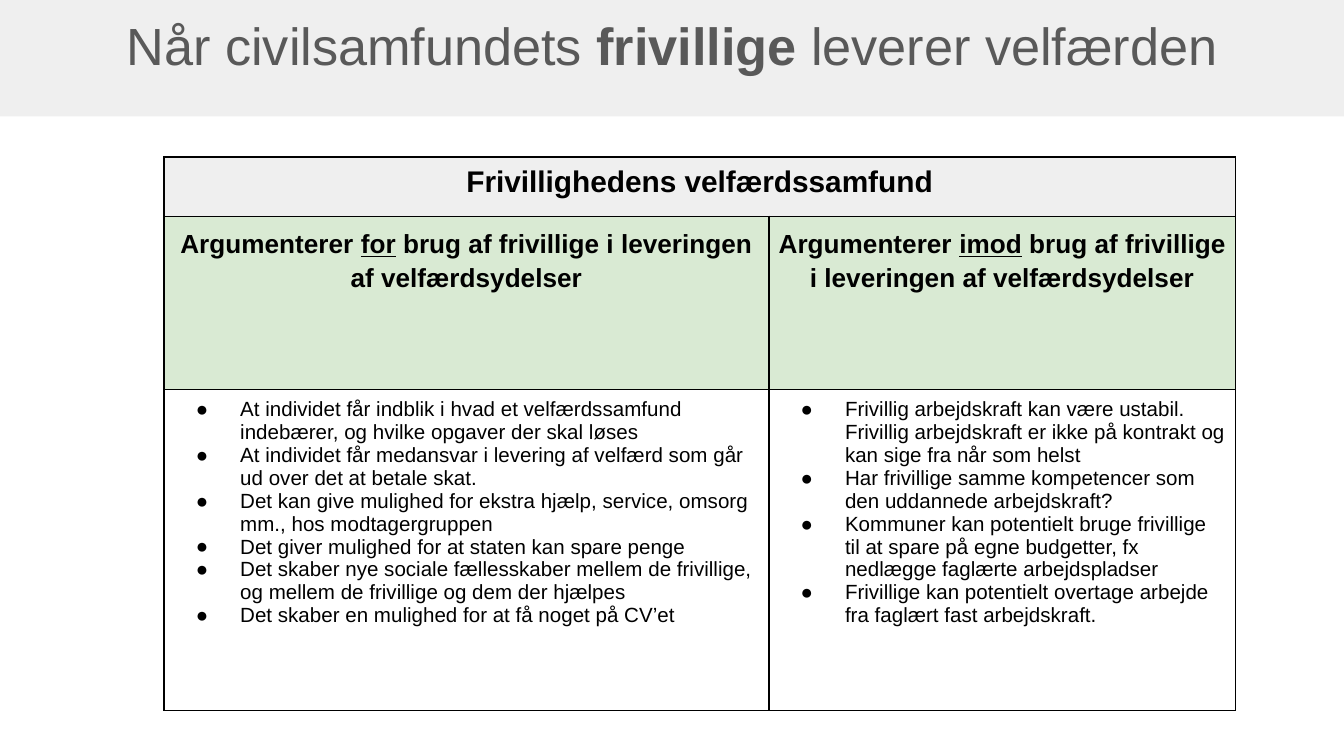
from lxml import etree
from pptx import Presentation
from pptx.dml.color import RGBColor
from pptx.enum.text import MSO_ANCHOR, MSO_AUTO_SIZE, PP_ALIGN
from pptx.oxml.ns import qn
from pptx.util import Cm, Pt

CENTER, LEFT = PP_ALIGN.CENTER, PP_ALIGN.LEFT
TOP = MSO_ANCHOR.TOP
NO_AUTOFIT = MSO_AUTO_SIZE.NONE
TITLE_ONLY = 5
FONT = "Arial"
COLORS = {"band": "EFEFEF", "title": "595959", "green": "D9EAD3", "black": "000000"}

# Emphasised words stand as separate runs: (text, emphasised)
TITLE = [("Når civilsamfundets ", False), ("frivillige", True), (" leverer velfærden", False)]
TABLE_HEADING = "Frivillighedens velfærdssamfund"
COLUMNS = [
    ("for", [
        "At individet får indblik i hvad et velfærdssamfund indebærer, og hvilke opgaver der skal løses",
        "At individet får medansvar i levering af velfærd som går ud over det at betale skat.",
        "Det kan give mulighed for ekstra hjælp, service, omsorg mm., hos modtagergruppen",
        "Det giver mulighed for at staten kan spare penge",
        "Det skaber nye sociale fællesskaber mellem de frivillige, og mellem de frivillige og dem der hjælpes",
        "Det skaber en mulighed for at få noget på CV’et",
    ]),
    ("imod", [
        "Frivillig arbejdskraft kan være ustabil. Frivillig arbejdskraft er ikke på kontrakt og kan sige fra når som helst",
        "Har frivillige samme kompetencer som den uddannede arbejdskraft?",
        "Kommuner kan potentielt bruge frivillige til at spare på egne budgetter, fx nedlægge faglærte arbejdspladser",
        "Frivillige kan potentielt overtage arbejde fra faglært fast arbejdskraft.",
    ]),
]


def rgb(name):
    return RGBColor.from_string(COLORS[name])


def add_run(paragraph, text, size, color="black", bold=False, underline=False):
    run = paragraph.add_run()
    run.text = text
    font = run.font
    font.name, font.size, font.bold, font.underline = FONT, Pt(size), bold, underline
    font.color.rgb = rgb(color)


def add_bullet(paragraph):
    properties = paragraph._p.get_or_add_pPr()
    properties.set("marL", str(Cm(1.27)))
    properties.set("indent", str(Cm(-0.84)))
    bullet_color = etree.SubElement(properties, qn("a:buClr"))
    etree.SubElement(bullet_color, qn("a:srgbClr"), val=COLORS["black"])
    etree.SubElement(properties, qn("a:buFont"), typeface=FONT)
    etree.SubElement(properties, qn("a:buChar"), char="●")


def set_borders(cell):
    properties = cell._tc.get_or_add_tcPr()
    for index, side in enumerate(("lnL", "lnR", "lnT", "lnB")):
        line = etree.Element(qn(f"a:{side}"), w=str(Pt(1)))
        fill = etree.SubElement(line, qn("a:solidFill"))
        etree.SubElement(fill, qn("a:srgbClr"), val=COLORS["black"])
        properties.insert(index, line)


def format_cell(cell, color=None):
    if color:
        cell.fill.solid()
        cell.fill.fore_color.rgb = rgb(color)
    else:
        cell.fill.background()
    cell.margin_left = cell.margin_right = Cm(0.17)
    cell.margin_top = cell.margin_bottom = Cm(0.17)
    cell.vertical_anchor = TOP
    set_borders(cell)


def place_title(slide, left, top, width, height):
    title = slide.shapes.title
    title.left, title.top, title.width, title.height = left, top, width, height
    title.fill.solid()
    title.fill.fore_color.rgb = rgb("band")
    frame = title.text_frame
    frame.auto_size = NO_AUTOFIT
    frame.word_wrap = True
    frame.vertical_anchor = TOP
    frame.margin_left = frame.margin_right = Cm(0.25)
    frame.margin_top = frame.margin_bottom = Cm(0.25)
    paragraph = frame.paragraphs[0]
    paragraph.alignment = CENTER
    for text, emphasised in TITLE:
        add_run(paragraph, text, 28, "title", bold=emphasised)


def place_arguments(slide, left, top, width, height):
    table = slide.shapes.add_table(3, 2, left, top, width, height).table
    table.first_row = table.horz_banding = False
    first_width = Cm(11.43)
    table.columns[0].width, table.columns[1].width = first_width, width - first_width
    heading_height, header_height = Cm(1.12), Cm(3.27)
    row_heights = (heading_height, header_height, height - heading_height - header_height)
    for row, row_height, color in zip(table.rows, row_heights, ("band", "green", None)):
        row.height = row_height
        for cell in row.cells:
            format_cell(cell, color)

    # Heading across both columns
    heading = table.cell(0, 0)
    heading.merge(table.cell(0, 1))
    paragraph = heading.text_frame.paragraphs[0]
    paragraph.alignment = CENTER
    add_run(paragraph, TABLE_HEADING, 16, bold=True)

    for index, (stance, arguments) in enumerate(COLUMNS):
        # Column header
        paragraph = table.cell(1, index).text_frame.paragraphs[0]
        paragraph.alignment = CENTER
        paragraph.line_spacing = 1.15
        add_run(paragraph, "Argumenterer ", 14, bold=True)
        add_run(paragraph, stance, 14, bold=True, underline=True)
        add_run(paragraph, " brug af frivillige i leveringen af velfærdsydelser", 14, bold=True)

        # Bulleted arguments
        frame = table.cell(2, index).text_frame
        for number, argument in enumerate(arguments):
            paragraph = frame.add_paragraph() if number else frame.paragraphs[0]
            paragraph.alignment = LEFT
            add_bullet(paragraph)
            add_run(paragraph, argument, 11)


def main():
    presentation = Presentation()
    presentation.slide_width, presentation.slide_height = Cm(25.4), Cm(14.29)
    slide = presentation.slides.add_slide(presentation.slide_layouts[TITLE_ONLY])
    place_title(slide, 0, 0, presentation.slide_width, Cm(2.2))
    place_arguments(slide, Cm(3.1), Cm(2.97), Cm(20.25), Cm(10.46))
    presentation.save("out.pptx")


if __name__ == "__main__":
    main()
